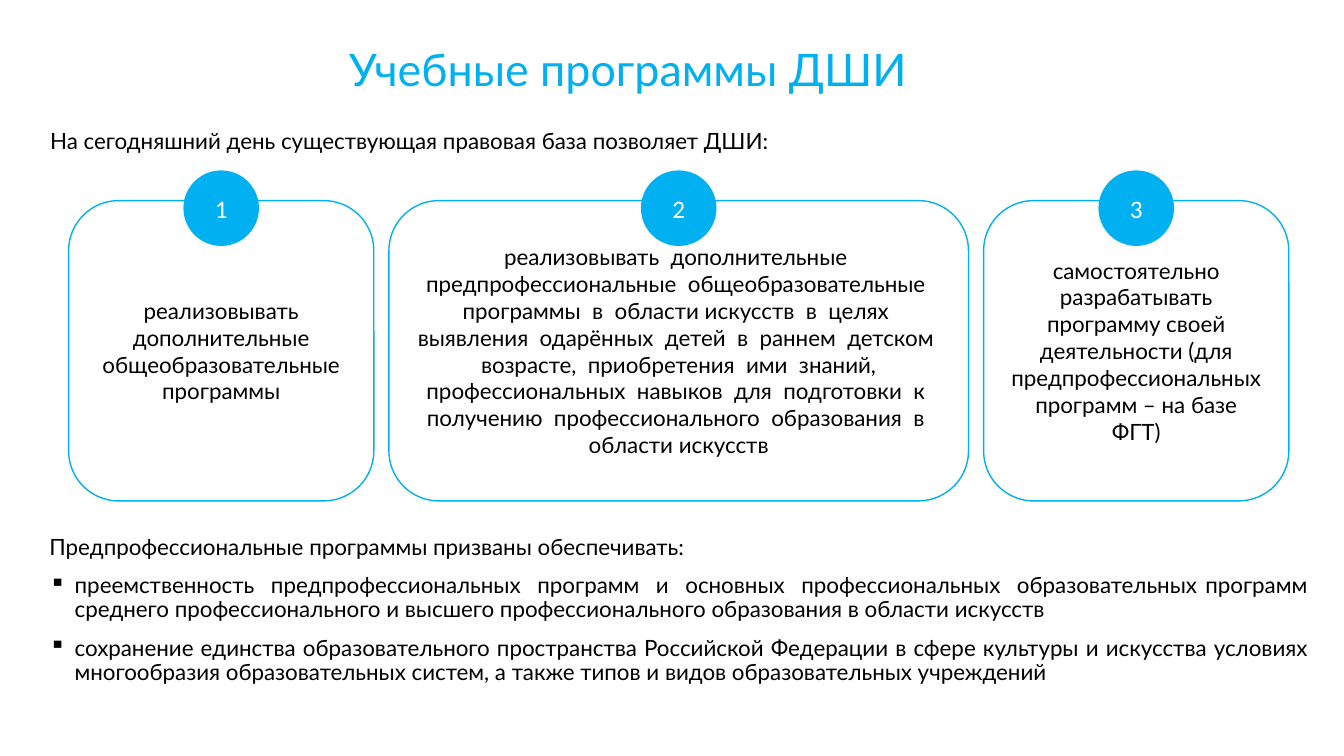
from dataclasses import dataclass

from lxml import etree
from pptx import Presentation
from pptx.dml.color import RGBColor
from pptx.enum.shapes import MSO_SHAPE
from pptx.enum.text import MSO_ANCHOR, PP_ALIGN
from pptx.oxml.ns import qn
from pptx.util import Pt

CENTER = PP_ALIGN.CENTER
JUSTIFY = PP_ALIGN.JUSTIFY
TOP = MSO_ANCHOR.TOP
MIDDLE = MSO_ANCHOR.MIDDLE
ROUNDED = MSO_SHAPE.ROUNDED_RECTANGLE
OVAL = MSO_SHAPE.OVAL


@dataclass(frozen=True)
class Theme:
    accent: RGBColor = RGBColor(0x00, 0xB0, 0xF0)
    ink: RGBColor = RGBColor(0x00, 0x00, 0x00)
    paper: RGBColor = RGBColor(0xFF, 0xFF, 0xFF)
    body_font: str = "Lato"
    number_font: str = "Calibri"
    title_size: float = 32
    number_size: float = 18
    body_size: float = 16
    outline: float = 1
    bullet_indent: float = 18


class SlideBuilder:
    def __init__(self, page, theme):
        self.page = page
        self.theme = theme

    def add_span(self, para, text, size, color, font, align):
        para.alignment = align
        span = para.add_run()
        span.text = text
        span.font.size = Pt(size)
        span.font.name = font
        span.font.color.rgb = color

    def text_frame(self, left, top, width, height):
        box = self.page.shapes.add_textbox(Pt(left), Pt(top), Pt(width), Pt(height))
        frame = box.text_frame
        frame.word_wrap = True
        frame.vertical_anchor = TOP
        return frame

    def label(self, area, text, size, color, align):
        frame = self.text_frame(*area)
        self.add_span(frame.paragraphs[0], text, size, color, self.theme.body_font, align)

    def bullet_list(self, area, heading, items):
        theme = self.theme
        frame = self.text_frame(*area)
        for index, text in enumerate([heading, *items]):
            para = frame.add_paragraph() if index else frame.paragraphs[0]
            self.add_span(para, text, theme.body_size, theme.ink, theme.body_font, JUSTIFY)
            para.line_spacing = 0.9
            para.space_before = Pt(10)
            if index:
                self.add_bullet(para)

    def add_bullet(self, para):
        indent = Pt(self.theme.bullet_indent)
        properties = para._p.get_or_add_pPr()
        properties.set("marL", str(indent))
        properties.set("indent", str(-indent))
        etree.SubElement(properties, qn("a:buChar")).set("char", "▪")

    def shape(self, kind, left, top, width, height):
        shape = self.page.shapes.add_shape(kind, Pt(left), Pt(top), Pt(width), Pt(height))
        shape.shadow.inherit = False
        shape.text_frame.word_wrap = True
        shape.text_frame.vertical_anchor = MIDDLE
        return shape

    def card(self, left, top, width, height, text):
        theme = self.theme
        card = self.shape(ROUNDED, left, top, width, height)
        card.fill.background()
        card.line.color.rgb = theme.accent
        card.line.width = Pt(theme.outline)
        self.add_span(card.text_frame.paragraphs[0], text, theme.body_size,
                      theme.ink, theme.body_font, CENTER)

    def badge(self, center, top, diameter, number):
        theme = self.theme
        badge = self.shape(OVAL, center - diameter / 2, top, diameter, diameter)
        badge.fill.solid()
        badge.fill.fore_color.rgb = theme.accent
        badge.line.fill.background()
        self.add_span(badge.text_frame.paragraphs[0], str(number), theme.number_size,
                      theme.paper, theme.number_font, CENTER)


CARDS = [
    (218, "реализовывать дополнительные общеобразовательные программы"),
    (414, "реализовывать  дополнительные  предпрофессиональные  "
          "общеобразовательные  программы  в  области искусств  в  целях  "
          "выявления  одарённых  детей  в  раннем  детском  возрасте,  "
          "приобретения  ими  знаний, профессиональных  навыков  для  "
          "подготовки  к  получению  профессионального  образования  в  "
          "области искусств"),
    (218, "самостоятельно разрабатывать программу своей деятельности "
          "(для предпрофессиональных программ – на базе ФГТ)"),
]
CARD_LEFT = 49
CARD_TOP = 143.3
CARD_HEIGHT = 214.5
CARD_GAP = 10.8
BADGE_TOP = 121.7
BADGE_DIAMETER = 54

GOALS = [
    "преемственность  предпрофессиональных  программ  и  основных  "
    "профессиональных  образовательных программ среднего профессионального "
    "и высшего профессионального образования в области искусств",
    "сохранение единства образовательного пространства Российской Федерации "
    "в сфере культуры и искусства условиях многообразия образовательных "
    "систем, а также типов и видов образовательных учреждений",
]


def main():
    deck = Presentation()
    deck.slide_width = Pt(960)
    deck.slide_height = Pt(540)
    theme = Theme()
    builder = SlideBuilder(deck.slides.add_slide(deck.slide_layouts[6]), theme)

    builder.bullet_list((28.3, 379.5, 913.5, 125.3),
                        "Предпрофессиональные программы призваны обеспечивать:", GOALS)
    builder.label((28.8, 26, 839.5, 46), "Учебные программы ДШИ",
                  theme.title_size, theme.accent, CENTER)

    left = CARD_LEFT
    for number, (width, text) in enumerate(CARDS, start=1):
        builder.card(left, CARD_TOP, width, CARD_HEIGHT, text)
        builder.badge(left + width / 2, BADGE_TOP, BADGE_DIAMETER, number)
        left += width + CARD_GAP

    builder.label((28.8, 87, 630, 26.6),
                  "На сегодняшний день существующая правовая база позволяет ДШИ:",
                  theme.body_size, theme.ink, JUSTIFY)
    deck.save("out.pptx")


if __name__ == "__main__":
    main()
